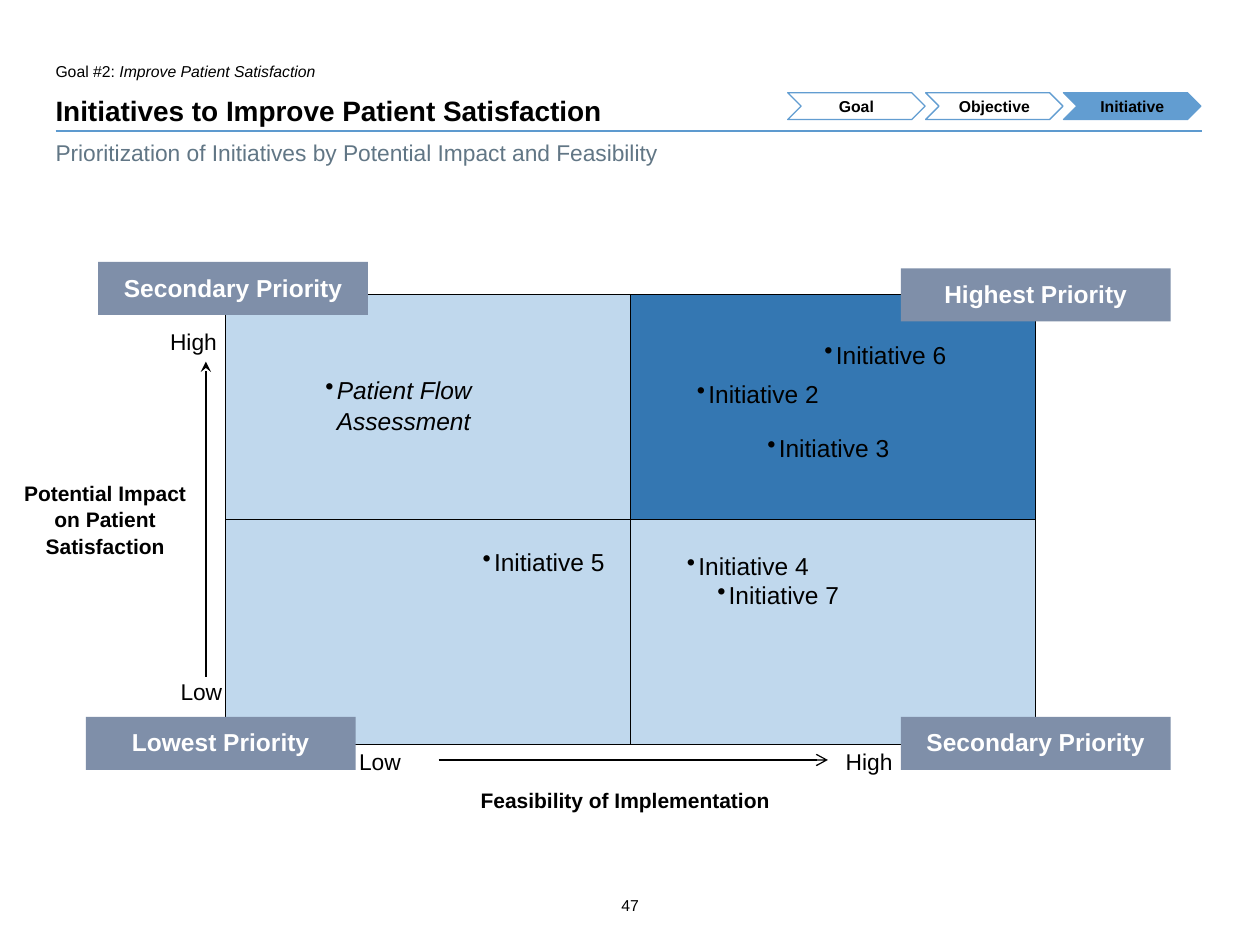
from dataclasses import dataclass

from lxml import etree
from pptx import Presentation
from pptx import util as u
from pptx.dml.color import RGBColor
from pptx.enum import shapes, text
from pptx.oxml.ns import qn

COLORS = {
    "black": "000000", "white": "FFFFFF", "rule": "5D9ACF", "step": "629DD1",
    "pale": "C0D8ED", "strong": "3477B2", "label": "7F8FA9", "subtitle": "617685",
}
FONT = "Arial"
LEFT, CENTER = text.PP_ALIGN.LEFT, text.PP_ALIGN.CENTER
WIDE_INSETS = (0.36, 0.18)
MARGIN, CONTENT_WIDTH = 1.12, 23.1
MATRIX_LEFT, MATRIX_TOP, MATRIX_WIDTH, MATRIX_HEIGHT = 4.55, 5.94, 16.33, 9.07
STEP_LEFT, STEP_TOP, STEP_WIDTH, STEP_HEIGHT, STEP_PITCH = 15.88, 1.87, 2.77, 0.54, 2.78
LABEL_WIDTH, LABEL_HEIGHT = 5.44, 1.07


@dataclass(frozen=True)
class Item:
    words: str
    left: float
    top: float
    width: float = 4.5
    height: float = 0.97
    italic: bool = False


INITIATIVES = [
    Item("Patient Flow Assessment", 6.2, 7.34, 5.23, 1.57, italic=True),
    Item("Initiative 2", 13.69, 7.42),
    Item("Initiative 3", 15.11, 8.51),
    Item("Initiative 4", 13.49, 10.9),
    Item("Initiative 5", 9.37, 10.82),
    Item("Initiative 6", 16.26, 6.63),
    Item("Initiative 7", 14.1, 11.48),
]
PRIORITIES = [
    Item("Lowest Priority", 1.73, 14.45),
    Item("Highest Priority", 18.16, 5.41),
    Item("Secondary Priority", 18.16, 14.45),
    Item("Secondary Priority", 1.98, 5.28),
]
AXIS_ENDS = [
    Item("Low", 3.28, 13.46, 1.96, 0.91),
    Item("Low", 6.88, 14.86, 1.96, 0.91),
    Item("High", 3.07, 6.4, 1.96, 0.91),
    Item("High", 16.69, 14.86, 1.96, 0.91),
]
AXIS_TITLES = [
    Item("Feasibility of Implementation", 7.87, 15.67, 9.47, 0.89),
    Item("Potential Impact on Patient Satisfaction", 0, 9.47, 4.24, 1.9),
]


def rgb(name):
    return RGBColor.from_string(COLORS[name])


def write(shape, *spans, size, color="black", bold=False, align=LEFT, insets=(0.25, 0.13),
          anchor=text.MSO_ANCHOR.TOP, wrap=True, bullet=False):
    """Fill a shape with one paragraph made of (words, italic) spans."""
    frame = shape.text_frame
    frame.word_wrap, frame.vertical_anchor = wrap, anchor
    frame.margin_left = frame.margin_right = u.Cm(insets[0])
    frame.margin_top = frame.margin_bottom = u.Cm(insets[1])
    para = frame.paragraphs[0]
    para.alignment, para.line_spacing = align, 1.06
    for words, italic in spans:
        span = para.add_run()
        span.text = words
        font = span.font
        font.name, font.size, font.bold, font.italic = FONT, u.Pt(size), bold, italic
        font.color.rgb = rgb(color)
    if bullet:
        properties = para._p.get_or_add_pPr()
        properties.set("marL", str(u.Cm(0.23)))
        properties.set("indent", str(-u.Cm(0.23)))
        etree.SubElement(properties, qn("a:buChar"), char="•")


def add_text(page, item: Item, **style):
    box = page.shapes.add_textbox(*map(u.Cm, (item.left, item.top, item.width, item.height)))
    write(box, (item.words, item.italic), **style)
    return box


def add_block(page, kind, left: float, top: float, width: float, height: float,
              fill=None, line=None):
    shape = page.shapes.add_shape(kind, *map(u.Cm, (left, top, width, height)))
    shape.shadow.inherit = False
    if fill:
        shape.fill.solid()
        shape.fill.fore_color.rgb = rgb(fill)
    else:
        shape.fill.background()
    if line:
        shape.line.color.rgb = rgb(line)
        shape.line.width = u.Pt(0.75)
    else:
        shape.line.fill.background()
    return shape


def add_line(page, start: tuple, end: tuple, color="black", weight=0.75, arrow=None):
    line = page.shapes.add_connector(shapes.MSO_CONNECTOR.STRAIGHT, *map(u.Cm, start + end))
    line.line.color.rgb = rgb(color)
    line.line.width = u.Pt(weight)
    if arrow:
        etree.SubElement(line.line._get_or_add_ln(), qn("a:tailEnd"), type=arrow)
    etree.SubElement(line._element.spPr, qn("a:effectLst"))
    return line


def add_heading(page):
    add_line(page, (MARGIN, 2.64), (24.23, 2.64), color="rule")
    goal = page.shapes.add_textbox(*map(u.Cm, (MARGIN, 1.12, 7.34, 0.51)))
    write(goal, ("Goal #2: ", False), ("Improve Patient Satisfaction", True),
          size=9, insets=(0, 0.1))
    add_text(page, Item("Initiatives to Improve Patient Satisfaction",
                        MARGIN, 1.88, CONTENT_WIDTH, 0.69),
             size=16, bold=True, insets=(0, 0), anchor=text.MSO_ANCHOR.BOTTOM)
    add_text(page, Item("Prioritization of Initiatives by Potential Impact and Feasibility",
                        MARGIN, 2.67, CONTENT_WIDTH, 0.76),
             size=13, color="subtitle", insets=(0, 0.1))
    for index, words in enumerate(("Goal", "Objective", "Initiative")):
        step = add_block(page, shapes.MSO_SHAPE.CHEVRON, STEP_LEFT + index * STEP_PITCH,
                         STEP_TOP, STEP_WIDTH, STEP_HEIGHT, line="step",
                         fill="step" if words == "Initiative" else None)
        write(step, (words, False), size=9, bold=True, align=CENTER, wrap=False,
              insets=WIDE_INSETS, anchor=text.MSO_ANCHOR.MIDDLE)


def add_matrix(page):
    rectangle = shapes.MSO_SHAPE.RECTANGLE
    middle_x = MATRIX_LEFT + MATRIX_WIDTH / 2
    middle_y = MATRIX_TOP + MATRIX_HEIGHT / 2
    right, bottom = MATRIX_LEFT + MATRIX_WIDTH, MATRIX_TOP + MATRIX_HEIGHT
    matrix = add_block(page, rectangle, MATRIX_LEFT, MATRIX_TOP, MATRIX_WIDTH, MATRIX_HEIGHT,
                       fill="pale", line="black")
    add_block(page, rectangle, middle_x, MATRIX_TOP, MATRIX_WIDTH / 2, MATRIX_HEIGHT / 2,
              fill="strong", line="black")
    dividers = [
        ((middle_x, MATRIX_TOP), (middle_x, bottom), 0, 2),
        ((MATRIX_LEFT, middle_y), (right, middle_y), 1, 3),
    ]
    for start, end, start_side, end_side in dividers:
        divider = add_line(page, start, end, weight=0.5)
        divider.begin_connect(matrix, start_side)
        divider.end_connect(matrix, end_side)
    for item in PRIORITIES:
        label = add_block(page, rectangle, item.left, item.top, LABEL_WIDTH, LABEL_HEIGHT,
                          fill="label")
        write(label, (item.words, False), size=14, color="white", bold=True, align=CENTER,
              insets=(0.25, 0.18))
    for item in INITIATIVES:
        add_text(page, item, size=14, insets=WIDE_INSETS, bullet=True)


def add_axes(page):
    add_line(page, (4.15, 13.64), (4.15, 7.29), arrow="stealth")
    add_line(page, (8.84, 15.32), (16.69, 15.32), arrow="arrow")
    for item in AXIS_ENDS:
        add_text(page, item, size=13, insets=WIDE_INSETS)
    for item in AXIS_TITLES:
        add_text(page, item, size=12, bold=True, align=CENTER, insets=WIDE_INSETS)


def main():
    deck = Presentation()
    deck.slide_width, deck.slide_height = u.Cm(25.4), u.Cm(19.05)
    page = deck.slides.add_slide(deck.slide_layouts[6])
    add_heading(page)
    add_matrix(page)
    add_axes(page)
    add_text(page, Item("47", 11.84, 17.93, 1.73, 0.66), size=9, align=CENTER,
             insets=(0.1, 0.1))
    deck.save("out.pptx")


if __name__ == "__main__":
    main()
